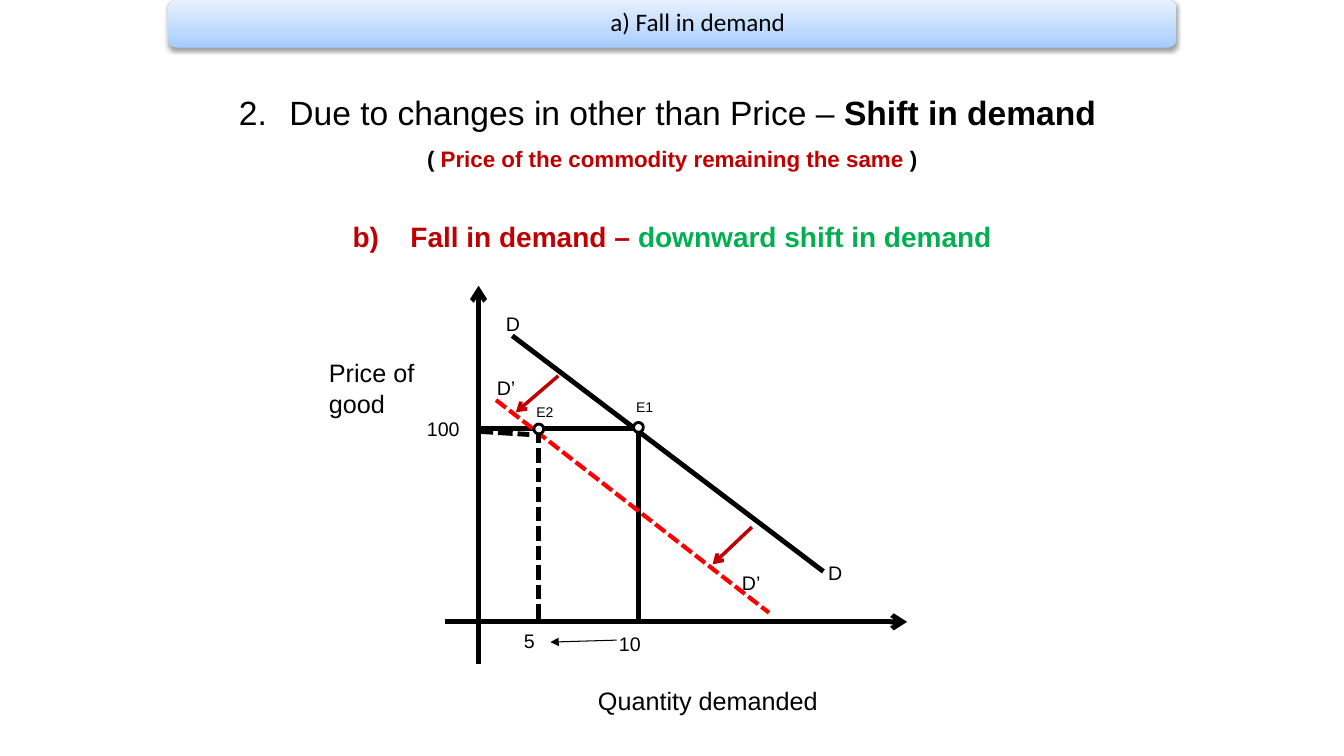
import pptx
import pptx.dml.color
import pptx.enum.dml
import pptx.enum.shapes
import pptx.enum.text
import pptx.oxml
import pptx.oxml.ns
import pptx.util

Cm, Pt = pptx.util.Cm, pptx.util.Pt
ALIGN, ANCHOR = pptx.enum.text.PP_ALIGN, pptx.enum.text.MSO_ANCHOR
SHAPE = pptx.enum.shapes.MSO_SHAPE
BLACK, WHITE, CRIMSON, RED, GREEN = "000000", "FFFFFF", "C00000", "FF0000", "00B050"

TITLE = "a) Fall in demand"
BANNER_STOPS = [(0, "A5CCFF"), (35, "BFDAFF"), (100, "E7F1FF")]

# size, space before (pt), numbering style or None, hanging indent (cm), runs (text, colour, bold)
HEADINGS = [
    (24, 0, "arabicPeriod", 1.27, [
        ("Due to changes in other than Price – ", BLACK, False),
        ("Shift in demand ", BLACK, True)]),
    (16, 0, None, 0, [
        ("( ", BLACK, True),
        ("Price of the commodity remaining the same ", CRIMSON, True),
        (")", BLACK, True)]),
    (20, 22, "alphaLcParenR", 1.46, [
        ("Fall in demand – ", CRIMSON, True),
        ("downward shift in demand", GREEN, True)]),
]

# Diagram positions in cm
AXIS_X, AXIS_Y = 12.06, 15.67
PRICE_Y = 10.8
OLD_X, NEW_X = 16.09, 13.58

# start, end, colour, width (pt), dashed, arrowhead or None
LINES = [
    ((14.07, 9.47), (13, 10.39), CRIMSON, 2.5, False, "arrow"),
    ((AXIS_X, 16.72), (AXIS_X, 7.2), BLACK, 3.5, False, "arrow"),
    ((11.22, AXIS_Y), (22.86, AXIS_Y), BLACK, 3.5, False, "arrow"),
    ((12.91, 8.46), (20.75, 14.4), BLACK, 3.5, False, None),
    ((AXIS_X, PRICE_Y), (OLD_X, PRICE_Y), BLACK, 3.5, False, None),
    ((OLD_X, PRICE_Y), (OLD_X, AXIS_Y), BLACK, 3.5, False, None),
    ((12.5, 10.08), (19.38, 15.44), RED, 3, True, None),
    ((AXIS_X, 10.87), (13.34, 10.95), BLACK, 3.5, True, None),
    ((NEW_X, PRICE_Y), (NEW_X, AXIS_Y), BLACK, 3.5, True, None),
    ((18.95, 13.28), (17.96, 14.22), CRIMSON, 2.5, False, "arrow"),
    ((15.54, 16.13), (13.87, 16.18), BLACK, 0.75, False, "triangle"),
]
EQUILIBRIA = [(OLD_X, 10.77), (NEW_X, 10.81)]
POINT_SIZE = 0.25

# text, left, top, width, height, size
LABELS = [
    ("Quantity demanded", 14.82, 17.15, 6.15, 1.02, 18),
    ("Price of good", 8.04, 8.89, 2.97, 1.8, 18),
    ("100", 10.51, 10.37, 1.55, 0.84, 14),
    ("10", 15.35, 15.8, 1.9, 0.84, 14),
    ("5", 12.95, 15.72, 1.27, 0.84, 14),
    ("E1", 15.78, 9.92, 1.7, 0.69, 10),
    ("E2", 13.27, 10.04, 1.7, 0.69, 10),
    ("D", 12.5, 7.74, 0.69, 0.84, 14),
    ("D", 20.62, 14, 0.69, 0.84, 14),
    ("D’", 12.27, 9.35, 1.07, 0.84, 14),
    ("D’", 18.45, 14.27, 1.3, 0.84, 14),
]


def rgb(value):
    return pptx.dml.color.RGBColor.from_string(value)


def add_xml(parent, tag, content="", **attributes):
    """Append a drawing element to parent."""
    listed = "".join(f' {name}="{value}"' for name, value in attributes.items())
    parent.append(pptx.oxml.parse_xml(
        f'<a:{tag} {pptx.oxml.ns.nsdecls("a")}{listed}>{content}</a:{tag}>'))


def style(span, size, color=BLACK, bold=False, font="Arial"):
    span.font.name, span.font.size, span.font.bold = font, Pt(size), bold
    span.font.color.rgb = rgb(color)


def place(shape, left, top, width, height):
    shape.left, shape.top = Cm(left), Cm(top)
    shape.width, shape.height = Cm(width), Cm(height)


def add_banner(page):
    banner = page.shapes.add_shape(
        SHAPE.ROUNDED_RECTANGLE, Cm(4.24), Cm(0), Cm(25.4), Cm(1.2))
    banner.line.fill.background()
    stops = "".join(f'<a:gs pos="{position * 1000}"><a:srgbClr val="{color}"/></a:gs>'
                    for position, color in BANNER_STOPS)
    properties = banner.fill._xPr
    line = properties.find(pptx.oxml.ns.qn("a:ln"))
    add_xml(properties, "gradFill",
            f'<a:gsLst>{stops}</a:gsLst><a:lin ang="16200000" scaled="0"/>')
    line.addprevious(properties[-1])
    add_xml(properties, "effectLst",
            f'<a:outerShdw blurRad="{Pt(3.1)}" dist="{Pt(1.6)}" dir="5400000" rotWithShape="0">'
            '<a:srgbClr val="000000"><a:alpha val="38000"/></a:srgbClr></a:outerShdw>')
    page.shapes.title._element.addprevious(banner._element)


def fill_title(title):
    place(title, 4.3, 0.05, 25.27, 1.09)
    frame = title.text_frame
    frame.text = TITLE
    frame.auto_size = pptx.enum.text.MSO_AUTO_SIZE.NONE
    frame.vertical_anchor = ANCHOR.MIDDLE
    frame.margin_left = Cm(1.48)
    frame.margin_right = frame.margin_top = frame.margin_bottom = Cm(0.18)
    para = frame.paragraphs[0]
    para.alignment, para.line_spacing = ALIGN.CENTER, 0.9
    style(para.runs[0], 18, font="Calibri")


def fill_headings(body):
    place(body, 4.24, 1.07, 25.4, 5.84)
    frame = body.text_frame
    frame.auto_size = pptx.enum.text.MSO_AUTO_SIZE.NONE
    frame.vertical_anchor = ANCHOR.TOP
    frame.margin_top = Cm(0.73)
    for index, (size, before, numbering, indent, spans) in enumerate(HEADINGS):
        para = frame.add_paragraph() if index else frame.paragraphs[0]
        para.alignment, para.line_spacing = ALIGN.CENTER, 1.5
        para.space_before = Pt(before)
        properties = para._p.get_or_add_pPr()
        properties.set("marL", str(Cm(indent)))
        properties.set("indent", str(-Cm(indent)))
        if numbering:
            add_xml(properties, "buAutoNum", type=numbering, startAt=2)
        else:
            add_xml(properties, "buNone")
        for text, color, bold in spans:
            span = para.add_run()
            span.text = text
            style(span, size, color, bold)


def add_line(page, start, end, color, width, dashed, head):
    line = page.shapes.add_connector(
        pptx.enum.shapes.MSO_CONNECTOR.STRAIGHT, *map(Cm, start + end))
    line.line.color.rgb, line.line.width = rgb(color), Pt(width)
    if dashed:
        line.line.dash_style = pptx.enum.dml.MSO_LINE.SQUARE_DOT
    if head:
        add_xml(line.line._get_or_add_ln(), "tailEnd", type=head)
    add_xml(line._element.spPr, "effectLst")


def add_point(page, x, y):
    point = page.shapes.add_shape(
        SHAPE.OVAL, Cm(x - POINT_SIZE / 2), Cm(y - POINT_SIZE / 2),
        Cm(POINT_SIZE), Cm(POINT_SIZE))
    point.shadow.inherit = False
    point.fill.solid()
    point.fill.fore_color.rgb = rgb(WHITE)
    point.line.color.rgb, point.line.width = rgb(BLACK), Pt(2)


def add_label(page, text, left, top, width, height, size):
    box = page.shapes.add_textbox(Cm(left), Cm(top), Cm(width), Cm(height))
    box.text_frame.word_wrap = True
    box.text_frame.text = text
    style(box.text_frame.paragraphs[0].runs[0], size)


def main():
    deck = pptx.Presentation()
    deck.slide_width, deck.slide_height = Cm(33.87), Cm(19.05)
    page = deck.slides.add_slide(deck.slide_layouts[1])
    add_banner(page)
    fill_title(page.shapes.title)
    fill_headings(page.placeholders[1])
    for line in LINES:
        add_line(page, *line)
    for point in EQUILIBRIA:
        add_point(page, *point)
    for label in LABELS:
        add_label(page, *label)
    deck.save("out.pptx")


if __name__ == "__main__":
    main()
